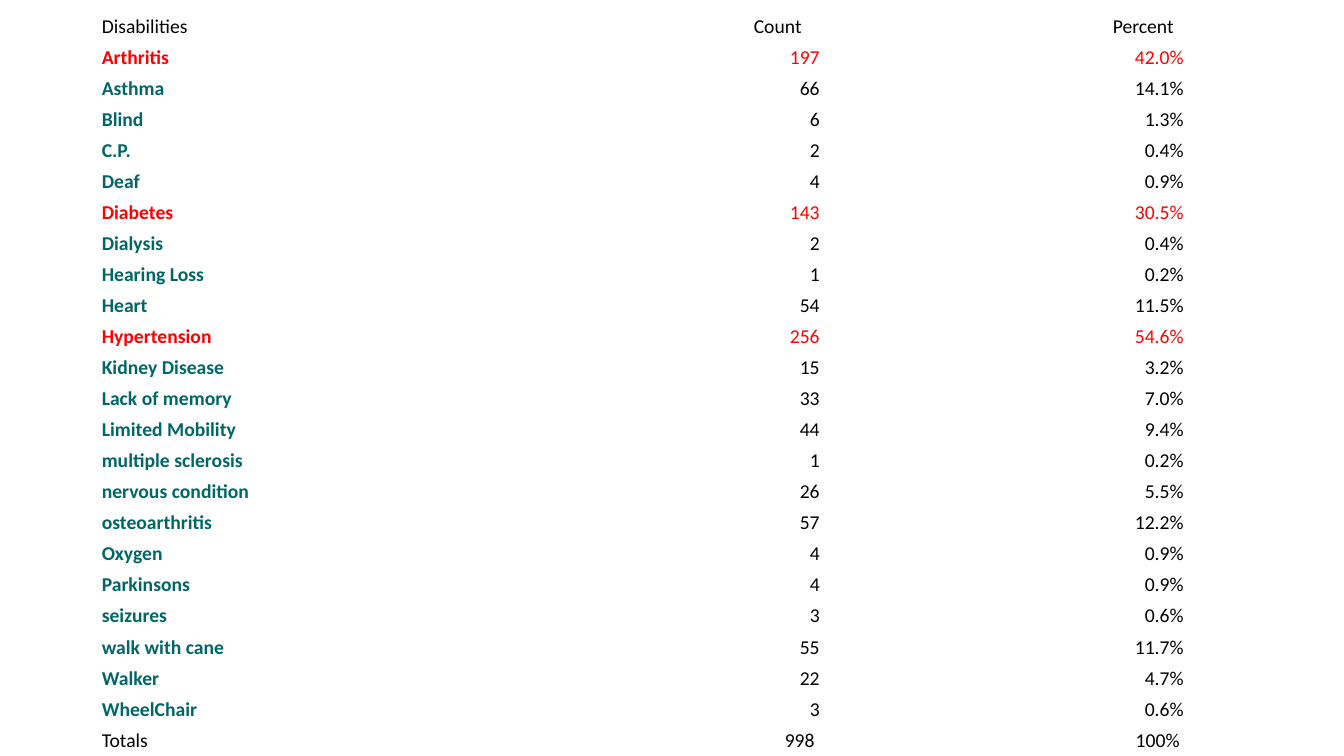
from pptx import Presentation
from pptx.dml.color import RGBColor
from pptx.enum.text import MSO_ANCHOR, PP_ALIGN
from pptx.util import Pt

BLACK = RGBColor(0x00, 0x00, 0x00)
RED = RGBColor(0xFF, 0x00, 0x00)
TEAL = RGBColor(0x00, 0x66, 0x66)

ROWS = [
    ("Disabilities", "Count", "Percent"),
    ("Arthritis", "197", "42.0%"),
    ("Asthma", "66", "14.1%"),
    ("Blind", "6", "1.3%"),
    ("C.P.", "2", "0.4%"),
    ("Deaf", "4", "0.9%"),
    ("Diabetes", "143", "30.5%"),
    ("Dialysis", "2", "0.4%"),
    ("Hearing Loss", "1", "0.2%"),
    ("Heart", "54", "11.5%"),
    ("Hypertension", "256", "54.6%"),
    ("Kidney Disease", "15", "3.2%"),
    ("Lack of memory", "33", "7.0%"),
    ("Limited Mobility", "44", "9.4%"),
    ("multiple sclerosis", "1", "0.2%"),
    ("nervous condition", "26", "5.5%"),
    ("osteoarthritis", "57", "12.2%"),
    ("Oxygen", "4", "0.9%"),
    ("Parkinsons", "4", "0.9%"),
    ("seizures", "3", "0.6%"),
    ("walk with cane", "55", "11.7%"),
    ("Walker", "22", "4.7%"),
    ("WheelChair", "3", "0.6%"),
    ("Totals", "998", "100%"),
]
HIGHLIGHTED = {"Arthritis", "Diabetes", "Hypertension"}
RIGHT_MARGINS = {"Count": 16.5, "Percent": 10.7, "998": 7.2, "100%": 6.5}
COLUMN_WIDTH = 260
ROW_HEIGHT = 22.17

presentation = Presentation()
presentation.slide_width = Pt(960)
presentation.slide_height = Pt(540)
slide = presentation.slides.add_slide(presentation.slide_layouts[6])

table = slide.shapes.add_table(
    len(ROWS), 3, Pt(69.1), Pt(7.9), Pt(3 * COLUMN_WIDTH), Pt(len(ROWS) * ROW_HEIGHT)
).table
table.first_row = False
table.horz_banding = False
for column in table.columns:
    column.width = Pt(COLUMN_WIDTH)

for row_index, texts in enumerate(ROWS):
    table.rows[row_index].height = Pt(ROW_HEIGHT)
    is_condition = 0 < row_index < len(ROWS) - 1
    for column_index, text in enumerate(texts):
        cell = table.cell(row_index, column_index)
        cell.fill.background()
        cell.vertical_anchor = MSO_ANCHOR.MIDDLE
        cell.margin_left = Pt(3.6)
        cell.margin_right = Pt(RIGHT_MARGINS.get(text, 3.6))
        cell.margin_top = cell.margin_bottom = Pt(1.44)
        cell.text_frame.text = text
        paragraph = cell.text_frame.paragraphs[0]
        paragraph.alignment = PP_ALIGN.RIGHT if column_index else PP_ALIGN.LEFT
        font = paragraph.runs[0].font
        font.name = "Calibri"
        font.size = Pt(14)
        font.bold = is_condition and column_index == 0
        if texts[0] in HIGHLIGHTED:
            font.color.rgb = RED
        else:
            font.color.rgb = TEAL if font.bold else BLACK

presentation.save("out.pptx")
